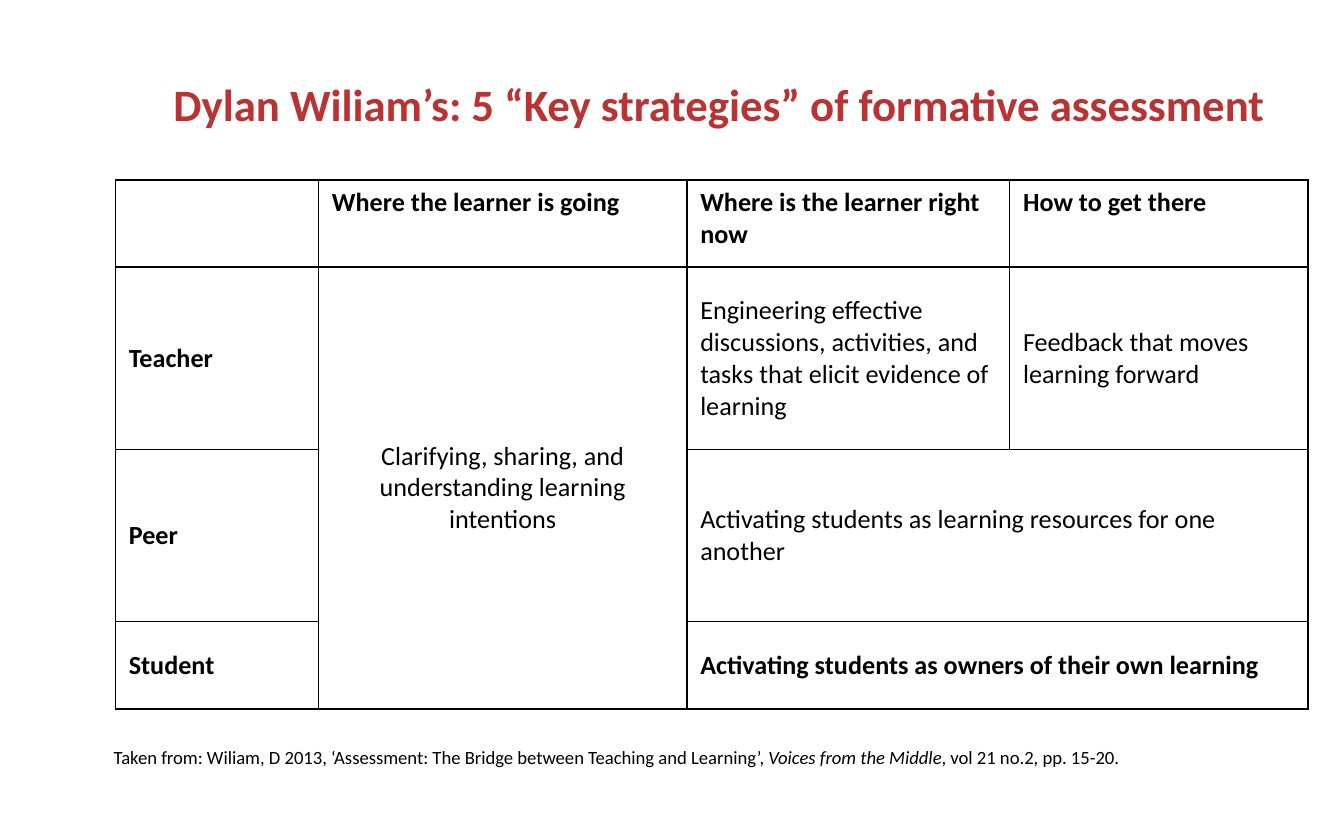
"""Build a slide with a table of five formative assessment strategies."""
from lxml import etree
from pptx import Presentation
from pptx.dml.color import RGBColor
from pptx.enum.text import MSO_ANCHOR, PP_ALIGN
from pptx.oxml.ns import qn
from pptx.util import Cm, Pt

TOP, MIDDLE = MSO_ANCHOR.TOP, MSO_ANCHOR.MIDDLE
LEFT, CENTER = PP_ALIGN.LEFT, PP_ALIGN.CENTER
FONT = "Calibri"
BLACK, WHITE, RED = "000000", "FFFFFF", "BA3232"
COL_WIDTHS = (3.84, 6.96, 6.1, 5.64)
ROW_HEIGHTS = (1.65, 3.45, 3.25, 1.65)
ROWS = (
    ("", "Where the learner is going", "Where is the learner right now", "How to get there"),
    ("Teacher", "Clarifying, sharing, and understanding learning intentions",
     "Engineering effective discussions, activities, and tasks that elicit evidence of learning",
     "Feedback that moves learning forward"),
    ("Peer", "", "Activating students as learning resources for one another", ""),
    ("Student", "", "Activating students as owners of their own learning", ""),
)
MERGES = (((1, 1), (3, 1)), ((2, 2), (2, 3)), ((3, 2), (3, 3)))


def color(value):
    """Return the colour for a hex string."""
    return RGBColor.from_string(value)


def set_font(p, size, value=BLACK, bold=False):
    """Set the font of a whole paragraph."""
    p.font.name = FONT
    p.font.size = Pt(size)
    p.font.bold = bold
    p.font.color.rgb = color(value)


def add_title(s, text):
    """Place and format the slide title."""
    sp = s.shapes.title
    sp.left, sp.top, sp.width, sp.height = Cm(2.49), Cm(0.64), Cm(22.2), Cm(2.64)
    tf = sp.text_frame
    tf.text = text
    tf.vertical_anchor = MIDDLE
    p = tf.paragraphs[0]
    p.alignment = CENTER
    set_font(p, 24, RED, True)


def add_borders(cell):
    """Draw a thin black line on each side of a cell."""
    props = cell._tc.get_or_add_tcPr()
    for side in ("lnL", "lnR", "lnT", "lnB"):
        line = etree.SubElement(props, qn(f"a:{side}"), w=str(Pt(1)))
        fill = etree.SubElement(line, qn("a:solidFill"))
        etree.SubElement(fill, qn("a:srgbClr"), val=BLACK)


def format_cell(cell, text, bold, anchor, align):
    """Fill one table cell with formatted text."""
    add_borders(cell)
    cell.fill.solid()
    cell.fill.fore_color.rgb = color(WHITE)
    cell.vertical_anchor = anchor
    cell.text = text
    p = cell.text_frame.paragraphs[0]
    p.alignment = align
    set_font(p, 14, bold=bold)


def add_strategy_table(s):
    """Add the table of strategies with its merged cells."""
    table = s.shapes.add_table(
        len(ROWS), len(COL_WIDTHS), Cm(2.18), Cm(3.4),
        Cm(sum(COL_WIDTHS)), Cm(sum(ROW_HEIGHTS))).table
    for column, width in zip(table.columns, COL_WIDTHS):
        column.width = Cm(width)
    for row, height in zip(table.rows, ROW_HEIGHTS):
        row.height = Cm(height)
    for i, texts in enumerate(ROWS):
        for j, text in enumerate(texts):
            bold = i in (0, len(ROWS) - 1) or j == 0
            align = CENTER if i and j == 1 else LEFT
            format_cell(table.cell(i, j), text, bold, MIDDLE if i else TOP, align)
    for first, last in MERGES:
        table.cell(*first).merge(table.cell(*last))


def add_citation(s, parts):
    """Add the source line from pairs of text and italic flag."""
    tf = s.shapes.add_textbox(Cm(1.9), Cm(13.97), Cm(20.22), Cm(0.69)).text_frame
    tf.word_wrap = False
    p = tf.paragraphs[0]
    set_font(p, 10)
    for text, italic in parts:
        r = p.add_run()
        r.text = text
        r.font.italic = italic


def main():
    """Build and save the slide."""
    prs = Presentation()
    prs.slide_width, prs.slide_height = Cm(25.4), Cm(15.88)
    s = prs.slides.add_slide(prs.slide_layouts[5])
    add_title(s, "Dylan Wiliam’s: 5 “Key strategies” of formative assessment")
    add_citation(s, (
        ("Taken from: Wiliam, D 2013, ‘Assessment: The Bridge between Teaching and Learning’, ", False),
        ("Voices from the Middle", True),
        (", vol 21 no.2, pp. 15-20.", False),
    ))
    add_strategy_table(s)
    prs.save("out.pptx")


if __name__ == "__main__":
    main()
